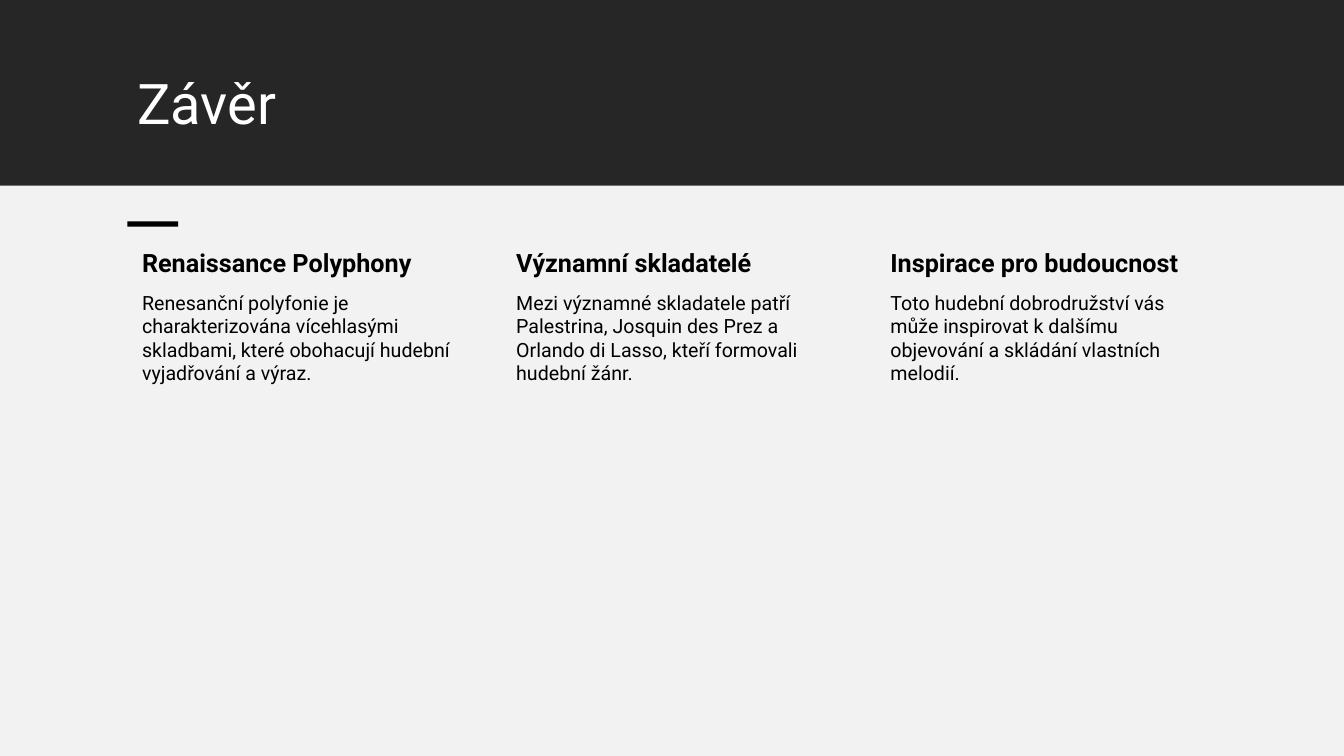
"""Builds the closing slide: a dark title band above three text columns."""
from pptx import Presentation
from pptx.dml.color import RGBColor
from pptx.enum.shapes import MSO_SHAPE as SHAPE
from pptx.enum.text import MSO_ANCHOR as ANCHOR
from pptx.util import Cm, Pt

BLACK = RGBColor(0x00, 0x00, 0x00)
WHITE = RGBColor(0xFF, 0xFF, 0xFF)
BAND = RGBColor(0x26, 0x26, 0x26)
PANEL = RGBColor(0xF2, 0xF2, 0xF2)
FONT = "Roboto"

COLUMN_LEFT, COLUMN_STEP, COLUMN_WIDTH = 3.2, 9.43, 8.59
COLUMNS = [
    ("Renaissance Polyphony",
     "Renesanční polyfonie je charakterizována vícehlasými skladbami, "
     "které obohacují hudební vyjadřování a výraz."),
    ("Významní skladatelé",
     "Mezi významné skladatele patří Palestrina, Josquin des Prez a "
     "Orlando di Lasso, kteří formovali hudební žánr."),
    ("Inspirace pro budoucnost",
     "Toto hudební dobrodružství vás může inspirovat k dalšímu "
     "objevování a skládání vlastních melodií."),
]

prs = Presentation()
prs.slide_width, prs.slide_height = Cm(33.87), Cm(19.05)
s = prs.slides.add_slide(prs.slide_layouts[6])


def add_text(text, box, size, color=BLACK, bold=False, left=0.38, inset=0.06,
             line_spacing=None, space_after=0):
    tf = s.shapes.add_textbox(*map(Cm, box)).text_frame
    tf.word_wrap = True
    tf.vertical_anchor = ANCHOR.TOP
    tf.margin_left = Cm(left)
    tf.margin_top = tf.margin_right = tf.margin_bottom = Cm(inset)
    p = tf.paragraphs[0]
    p.line_spacing = line_spacing
    p.space_after = Pt(space_after)
    r = p.add_run()
    r.text = text
    r.font.name, r.font.size, r.font.bold = FONT, Pt(size), bold
    r.font.color.rgb = color


for box, color in [
    ((0, -0.03, 33.87, 4.71), BAND),
    ((0, 4.69, 33.87, 14.36), PANEL),
    ((3.21, 5.58, 1.28, 0.13), BLACK),
]:
    sp = s.shapes.add_shape(SHAPE.RECTANGLE, *map(Cm, box))
    sp.shadow.inherit = False
    sp.fill.solid()
    sp.fill.fore_color.rgb = color
    sp.line.fill.background()

add_text("Závěr", (3.21, 1.78, 27.46, 2.49), 40, color=WHITE,
         left=0.25, inset=0.13, line_spacing=0.9)

for i, (heading, body) in enumerate(COLUMNS):
    x = COLUMN_LEFT + i * COLUMN_STEP
    add_text(heading, (x, 6.15, COLUMN_WIDTH, 1.1), 18, bold=True,
             inset=0.08, space_after=6)
    add_text(body, (x, 7.26, COLUMN_WIDTH, 9.91), 14, space_after=5)

prs.save("out.pptx")
